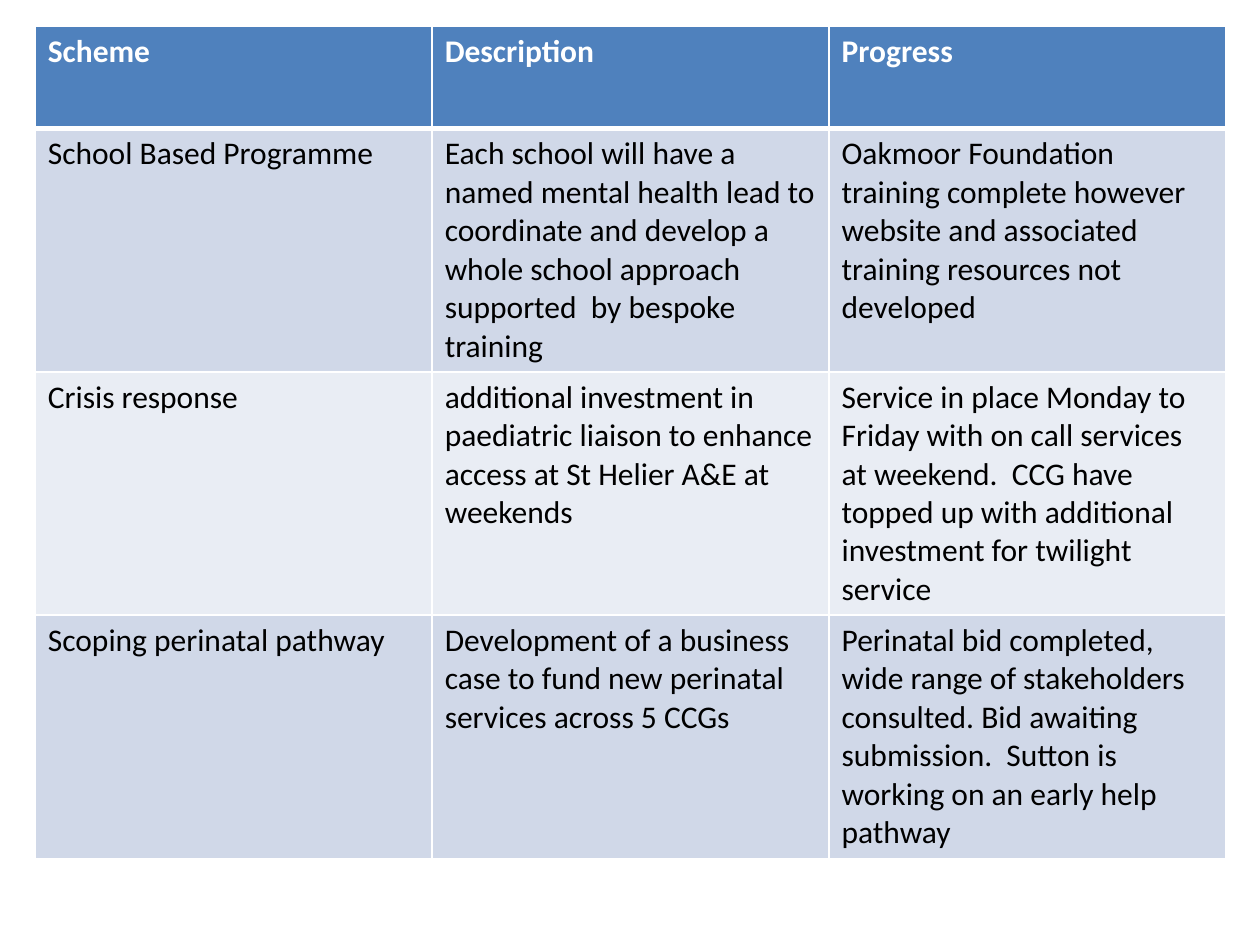
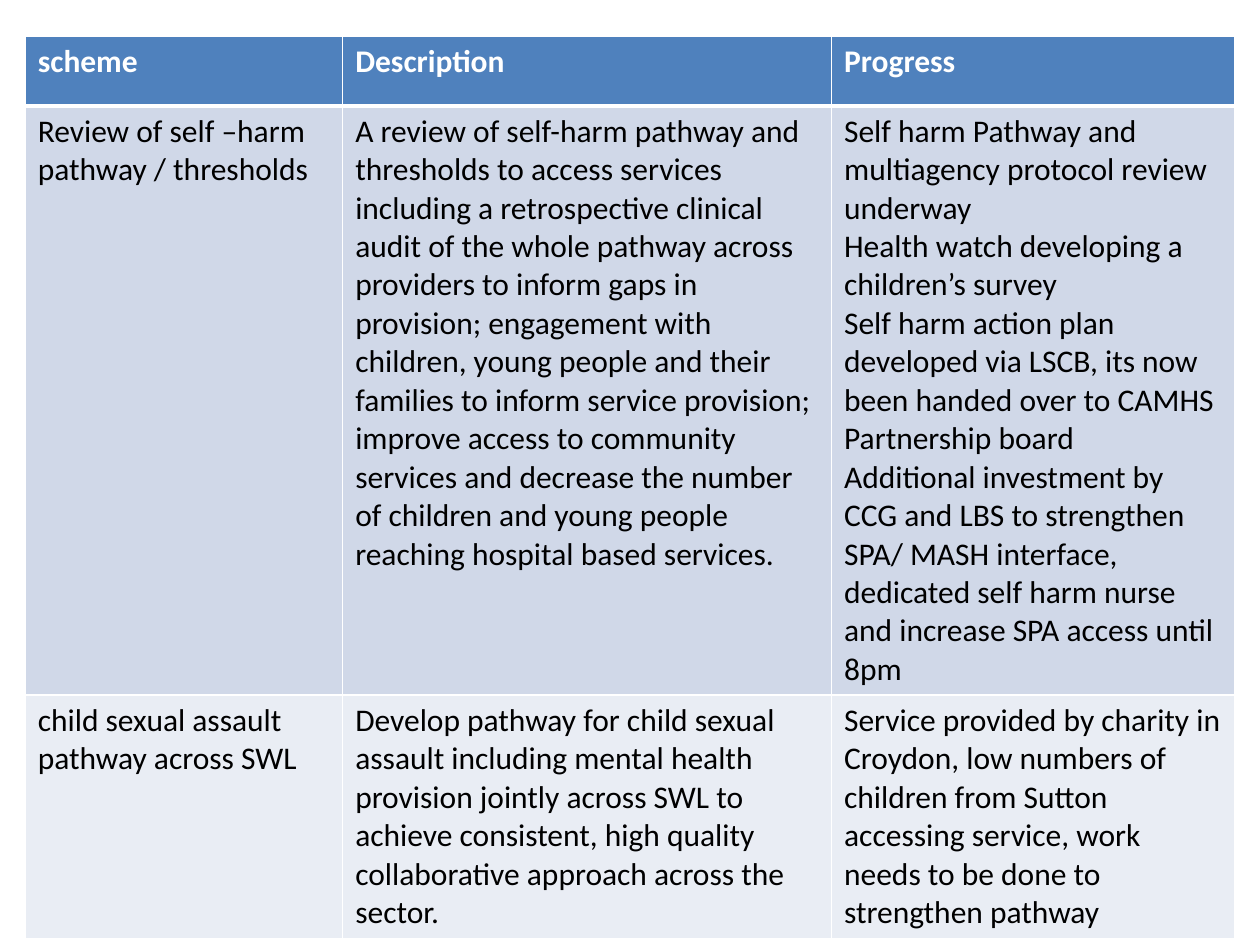
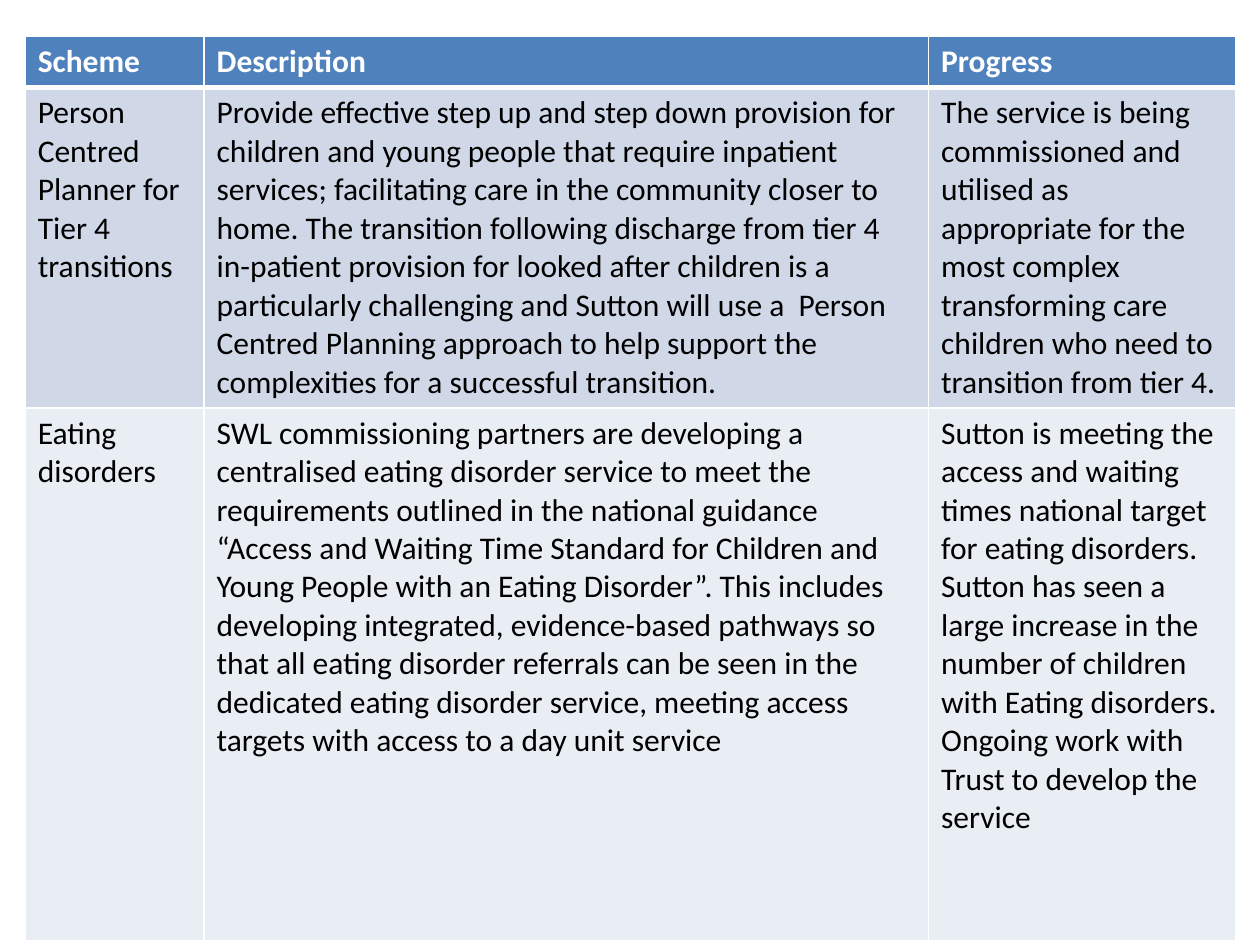
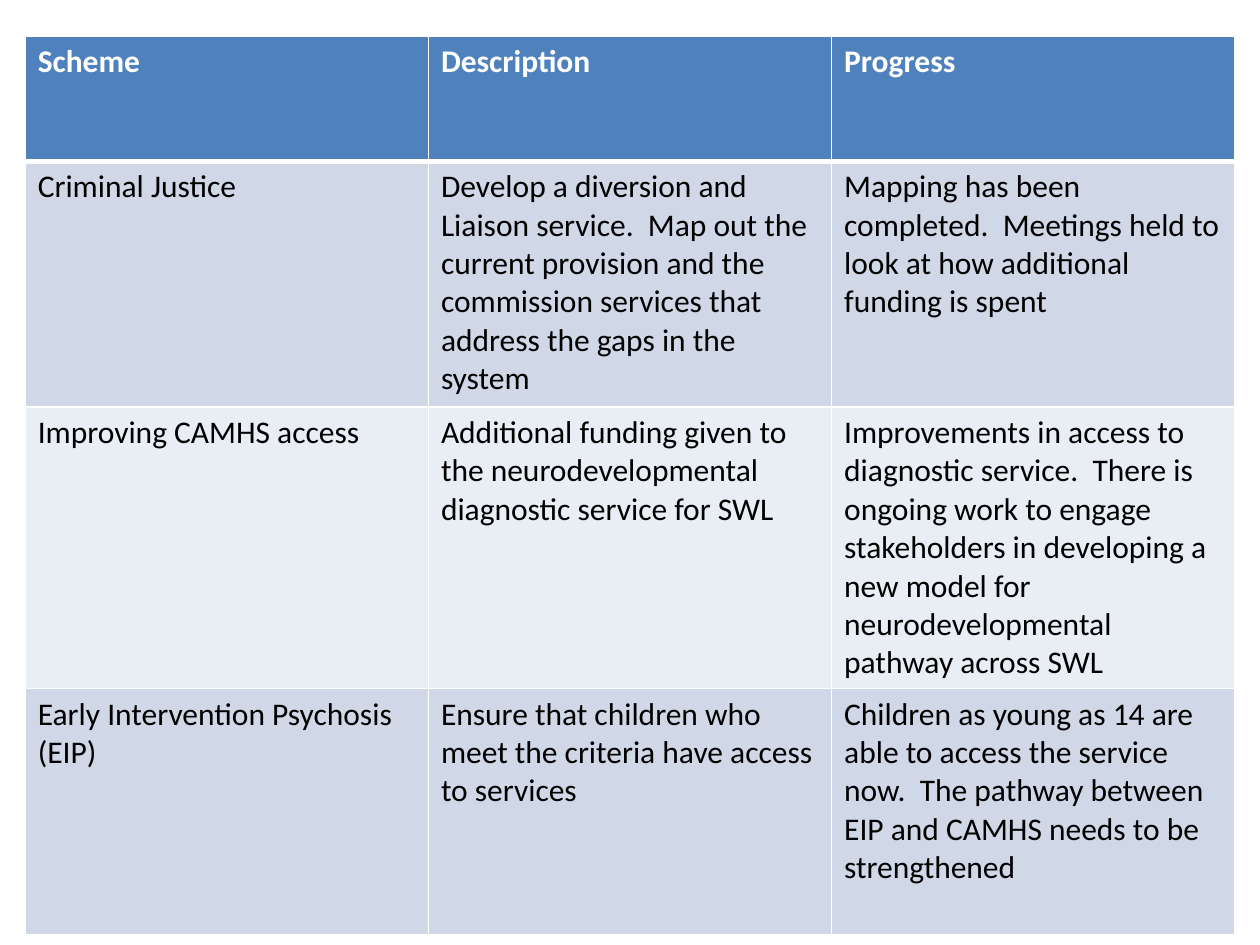
from dataclasses import dataclass

import lxml.etree
import pptx
import pptx.dml.color
import pptx.oxml.ns
import pptx.util
from pptx.util import Inches

FONT = "Calibri"
FONT_SIZE = 18
HEADER_FILL = "4F81BD"
BAND_FILLS = ("D0D8E8", "E9EDF4")
WHITE = "FFFFFF"
BLACK = "000000"
THIN, THICK = 1, 3

Row = tuple[str, str, str]


@dataclass(frozen=True)
class SchemeTable:
    left: float
    top: float
    width: float
    height: float
    column_widths: tuple[float, ...]
    row_heights: tuple[float, ...]
    schemes: tuple[Row, ...]
    header: Row = ("Scheme", "Description", "Progress")


TABLES = (
    SchemeTable(
        0.28, 0.21, 9.45, 6.51, (3.15,) * 3, (0.81, 1.79, 1.23, 0.81),
        (
            (
                "School Based Programme",
                "Each school will have a named mental health lead to coordinate and develop "
                "a whole school approach  supported  by bespoke training",
                "Oakmoor Foundation training complete however website and associated "
                "training resources not developed",
            ),
            (
                "Crisis response",
                "additional investment in paediatric liaison to enhance access at "
                "St Helier A&E at weekends",
                "Service in place Monday to Friday with on call services at weekend.  "
                "CCG have topped up with additional investment for twilight service",
            ),
            (
                "Scoping perinatal pathway",
                "Development of a business case to fund new perinatal services across 5 CCGs",
                "Perinatal bid completed, wide range of stakeholders consulted. Bid awaiting "
                "submission.  Sutton is working on an early help pathway",
            ),
        ),
    ),
    SchemeTable(
        0.2, 0.29, 9.61, 7.05, (2.52, 3.88, 3.2), (0.55, 1.15, 1.15),
        (
            (
                "Review of self –harm pathway / thresholds",
                "A review of self-harm pathway and thresholds to access services including a "
                "retrospective clinical audit of the whole pathway across providers to inform "
                "gaps in provision; engagement with children, young people and their families "
                "to inform service provision; improve access to community services and "
                "decrease the number of children and young people reaching hospital based "
                "services.",
                "Self harm Pathway and multiagency protocol review underway\n"
                "Health watch developing a  children’s survey\n"
                "Self harm action plan developed via LSCB, its now been handed over to CAMHS "
                "Partnership board\n"
                "Additional investment by CCG and LBS to strengthen SPA/ MASH interface, "
                "dedicated self harm nurse and increase SPA access until 8pm",
            ),
            (
                "child sexual assault pathway across SWL",
                "Develop pathway for child sexual assault including mental health provision "
                "jointly across SWL to achieve consistent, high quality collaborative approach "
                "across the sector.",
                "Service provided by charity in Croydon, low numbers of children from Sutton "
                "accessing service, work needs to be done to strengthen pathway",
            ),
        ),
        ("scheme", "Description", "Progress"),
    ),
    SchemeTable(
        0.2, 0.29, 9.61, 7.13, (1.42, 5.75, 2.44), (0.39, 2.39, 4.23),
        (
            (
                "Person Centred Planner for Tier 4 transitions",
                "Provide effective step up and step down provision for children and young "
                "people that require inpatient services; facilitating care in the community "
                "closer to home. The transition following discharge from tier 4 in-patient "
                "provision for looked after children is a particularly challenging and Sutton "
                "will use a  Person Centred Planning approach to help support the "
                "complexities for a successful transition.",
                "The service is being commissioned and utilised as appropriate for the most "
                "complex transforming care children who need to transition from tier 4.",
            ),
            (
                "Eating disorders",
                "SWL commissioning partners are developing a centralised eating disorder "
                "service to meet the requirements outlined in the national guidance “Access "
                "and Waiting Time Standard for Children and Young People with an Eating "
                "Disorder”. This includes developing integrated, evidence-based pathways so "
                "that all eating disorder referrals can be seen in the dedicated eating "
                "disorder service, meeting access targets with access to a day unit service",
                "Sutton is meeting the access and waiting times national target for eating "
                "disorders.\n"
                "Sutton has seen a large increase in the number of children with Eating "
                "disorders. Ongoing work with Trust to develop the service",
            ),
        ),
    ),
    SchemeTable(
        0.2, 0.29, 9.61, 7.1, (3.2,) * 3, (0.99, 1.95, 1.95, 1.95),
        (
            (
                "Criminal Justice",
                "Develop a diversion and Liaison service.  Map out the current provision and "
                "the commission services that address the gaps in the system",
                "Mapping has been completed.  Meetings held to look at how additional funding "
                "is spent",
            ),
            (
                "Improving CAMHS access",
                "Additional funding given to the neurodevelopmental  diagnostic service for SWL",
                "Improvements in access to diagnostic service.  There is ongoing work to "
                "engage stakeholders in developing a new model for neurodevelopmental pathway "
                "across SWL",
            ),
            (
                "Early Intervention Psychosis (EIP)",
                "Ensure that children who meet the criteria have access to services",
                "Children as young as 14 are able to access the service now.  The pathway "
                "between EIP and CAMHS needs to be strengthened",
            ),
        ),
    ),
)


def rgb(value: str) -> pptx.dml.color.RGBColor:
    return pptx.dml.color.RGBColor.from_string(value)


def set_borders(cell, top: int, bottom: int) -> None:
    tc_pr = cell._tc.get_or_add_tcPr()
    qn = pptx.oxml.ns.qn
    for side, width in (("L", THIN), ("R", THIN), ("T", top), ("B", bottom)):
        ln = lxml.etree.SubElement(tc_pr, qn(f"a:ln{side}"), w=str(pptx.util.Pt(width)))
        fill = lxml.etree.SubElement(ln, qn("a:solidFill"))
        lxml.etree.SubElement(fill, qn("a:srgbClr"), val=WHITE)


def fill_cell(cell, text: str, row: int) -> None:
    is_header = row == 0
    set_borders(cell, THICK if row == 1 else THIN, THICK if is_header else THIN)
    cell.fill.solid()
    cell.fill.fore_color.rgb = rgb(HEADER_FILL if is_header else BAND_FILLS[(row - 1) % 2])
    tf = cell.text_frame
    tf.text = text
    for p in tf.paragraphs:
        p.font.name = FONT
        p.font.size = pptx.util.Pt(FONT_SIZE)
        p.font.bold = is_header
        p.font.color.rgb = rgb(WHITE if is_header else BLACK)


def draw_table(s, spec: SchemeTable) -> None:
    rows = (spec.header, *spec.schemes)
    frame = s.shapes.add_table(
        len(rows), len(spec.header),
        Inches(spec.left), Inches(spec.top), Inches(spec.width), Inches(spec.height),
    )
    table = frame.table
    for column, width in zip(table.columns, spec.column_widths):
        column.width = Inches(width)
    for row, height in zip(table.rows, spec.row_heights):
        row.height = Inches(height)
    frame.width, frame.height = Inches(spec.width), Inches(spec.height)
    for i, texts in enumerate(rows):
        for j, text in enumerate(texts):
            fill_cell(table.cell(i, j), text, i)


def main() -> None:
    prs = pptx.Presentation()
    prs.slide_width, prs.slide_height = Inches(10), Inches(7.5)
    for spec in TABLES:
        draw_table(prs.slides.add_slide(prs.slide_layouts[6]), spec)
    prs.save("out.pptx")


if __name__ == "__main__":
    main()
